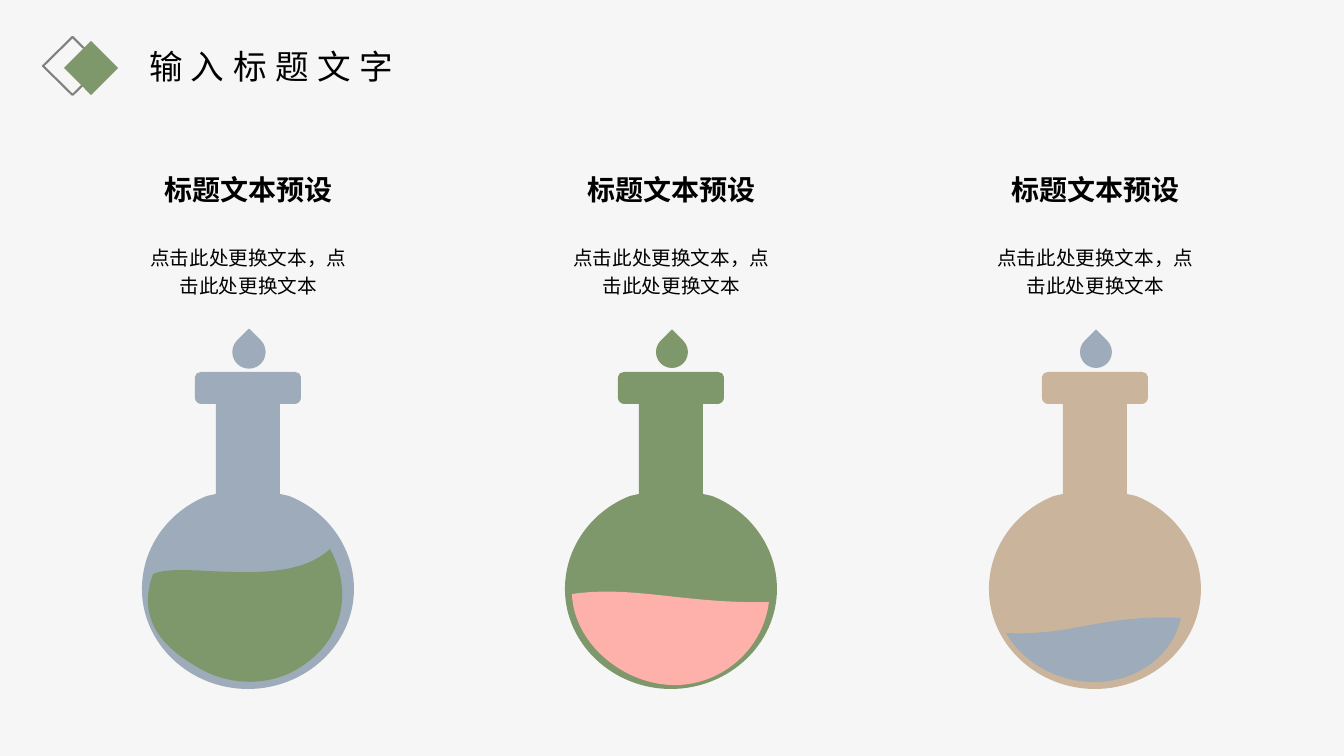
"""Build a slide with three flasks, each under a heading and a short text."""
import math

import lxml.etree
import pptx
import pptx.util
import pptx.dml.color
import pptx.enum.shapes
import pptx.enum.text
import pptx.oxml
import pptx.oxml.ns

PX = 914400 / 100.8
THEME = {
    "font": "Noto Sans CJK SC",
    "background": "F6F6F6", "text": "000000", "outline": "808080",
    "blue": "9EABBA", "green": "7E986B", "sand": "CBB49C", "pink": "FDB1AA",
    "title": 24, "heading": 20, "body": 14,
}
SHAPE = pptx.enum.shapes.MSO_SHAPE
ALIGN = pptx.enum.text.PP_ALIGN
ANCHOR = pptx.enum.text.MSO_ANCHOR
AUTO_SIZE = pptx.enum.text.MSO_AUTO_SIZE
qn = pptx.oxml.ns.qn


def add_text(shapes, text, *, box, size, bold=False, align=ALIGN.LEFT, anchor=ANCHOR.TOP,
             inset=(10, 5), wrap=True, line_spacing=None, spacing=0, auto_size=AUTO_SIZE.NONE):
    shape = shapes.add_textbox(*[round(length * PX) for length in box])
    frame = shape.text_frame
    frame.margin_left = frame.margin_right = round(inset[0] * PX)
    frame.margin_top = frame.margin_bottom = round(inset[1] * PX)
    frame.auto_size = auto_size
    frame.word_wrap = wrap
    frame.vertical_anchor = anchor
    paragraph = frame.paragraphs[0]
    paragraph.alignment = align
    paragraph.line_spacing = line_spacing
    run = paragraph.add_run()
    run.text = text
    run.font.name = THEME["font"]
    run.font.size = pptx.util.Pt(THEME[size])
    run.font.bold = bold
    run.font.color.rgb = pptx.dml.color.RGBColor.from_string(THEME["text"])
    properties = run._r.get_or_add_rPr()
    properties.set("spc", str(spacing * 100))
    east_asian = pptx.oxml.parse_xml(f'<a:ea {pptx.oxml.ns.nsdecls("a")} typeface="{THEME["font"]}"/>')
    properties.find(qn("a:latin")).addnext(east_asian)


def add_outline(shapes, centre, box, rotation, start, segments):
    left, top, width, height = box
    corners = [(left, top), (left + width, top), (left + width, top + height), (left, top + height)]
    corners = [((centre + x) * PX, y * PX) for x, y in corners]
    builder = shapes.build_freeform(*corners[0], scale=1.0)
    builder.add_line_segments(corners[1:], close=True)
    shape = builder.convert_to_shape()
    shape.rotation = rotation
    outline = shape._element.find(".//" + qn("a:path"))
    for command in list(outline):
        outline.remove(command)
    cosine, sine = math.cos(math.radians(rotation)), math.sin(math.radians(rotation))
    for index, points in enumerate([(start,), *segments]):
        tag = "a:moveTo" if index == 0 else "a:lnTo" if len(points) == 1 else "a:cubicBezTo"
        command = lxml.etree.SubElement(outline, qn(tag))
        for x, y in points:
            across, down = x - left - width / 2, y - top - height / 2
            point = lxml.etree.SubElement(command, qn("a:pt"))
            point.set("x", str(round((width / 2 + across * cosine + down * sine) * PX)))
            point.set("y", str(round((height / 2 - across * sine + down * cosine) * PX)))
    lxml.etree.SubElement(outline, qn("a:close"))
    return shape


FIRST_CENTRE, TWO_COLUMN_STEPS = 248, 847
flask_start = (32, 372)
right_half = [
    ((47, 372),), ((50, 372), (53, 374), (53, 377)), ((53, 398),),
    ((53, 401), (50, 404), (47, 404)), ((32, 404),), ((32, 494),), ((41, 496),),
    ((79, 511), (106, 547), (106, 589)), ((106, 644), (58, 689), (0, 689)),
]
segment_starts = [flask_start] + [segment[-1] for segment in right_half[:-1]]
left_half = [
    tuple((-x, y) for x, y in (*reversed(segment[:-1]), previous))
    for previous, segment in reversed(list(zip(segment_starts, right_half)))
]
flask_outline = ((-106, 372, 212, 317), 0, flask_start, right_half + left_half + [(flask_start,)])

columns = [
    ("blue", "green", "blue", "blue", ((-83, 508, 157, 190), 289.7, (82, 549), [
        ((105, 590), (95, 638), (57, 664)), ((26, 687), (-19, 688), (-54, 665)),
        ((-93, 642), (-109, 613), (-95, 574)), ((-65, 560), (37, 591), (82, 549))])),
    ("green", "pink", "green", None, ((-66, 530, 116, 191), 289.3, (98, 602), [
        ((92, 651), (48, 687), (0, 685)), ((-49, 683), (-97, 643), (-99, 594)),
        ((-38, 585), (14, 604), (98, 602))])),
    ("sand", "blue", "blue", None, ((-55, 556, 100, 158), 291.4, (86, 618), [
        ((78, 655), (43, 681), (2, 682)), ((-35, 683), (-71, 664), (-89, 633)),
        ((-21, 636), (7, 614), (86, 618))])),
]

presentation = pptx.Presentation()
presentation.slide_width = round(1344 * PX)
presentation.slide_height = round(756 * PX)
slide = presentation.slides.add_slide(presentation.slide_layouts[6])
slide.background.fill.solid()
slide.background.fill.fore_color.rgb = pptx.dml.color.RGBColor.from_string(THEME["background"])

painted = []
for index, (flask, liquid, drop, drop_line, liquid_outline) in enumerate(columns):
    centre = FIRST_CENTRE + index * TWO_COLUMN_STEPS // 2
    for outline, colour in ((flask_outline, flask), (liquid_outline, liquid)):
        painted.append((add_outline(slide.shapes, centre, *outline), colour, None, 0))

    teardrop = slide.shapes.add_shape(
        SHAPE.TEAR, *[round(length * PX) for length in (centre - 15, 336, 32, 32)])
    teardrop.rotation = 315
    painted.append((teardrop, drop, drop_line, 1))

    column_group = slide.shapes.add_group_shape()
    add_text(column_group.shapes, "标题文本预设", box=(centre - 129, 167, 259, 44), size="heading",
             bold=True, align=ALIGN.CENTER, anchor=ANCHOR.MIDDLE, inset=(24, 0), wrap=False)
    add_text(column_group.shapes, "点击此处更换文本，点击此处更换文本",
             box=(centre - 129, 241, 259, 95), size="body",
             align=ALIGN.CENTER, inset=(24, 0), line_spacing=1.2)

emblem = slide.shapes.add_group_shape()
for box, fill, line in (((43, 37, 59, 58), None, "outline"), ((64, 41, 54, 54), "green", None)):
    diamond = emblem.shapes.add_shape(SHAPE.DIAMOND, *[round(length * PX) for length in box])
    painted.append((diamond, fill, line, 1.5))

for shape, fill, line, line_width in painted:
    shape.shadow.inherit = False
    for format_fill, colour in ((shape.fill, fill), (shape.line.fill, line)):
        if colour is None:
            format_fill.background()
        else:
            format_fill.solid()
            format_fill.fore_color.rgb = pptx.dml.color.RGBColor.from_string(THEME[colour])
    if line:
        shape.line.width = pptx.util.Pt(line_width)

add_text(slide.shapes, "输入标题文字", box=(139, 41, 363, 50), size="title", spacing=6,
         auto_size=AUTO_SIZE.SHAPE_TO_FIT_TEXT)

presentation.save("out.pptx")
